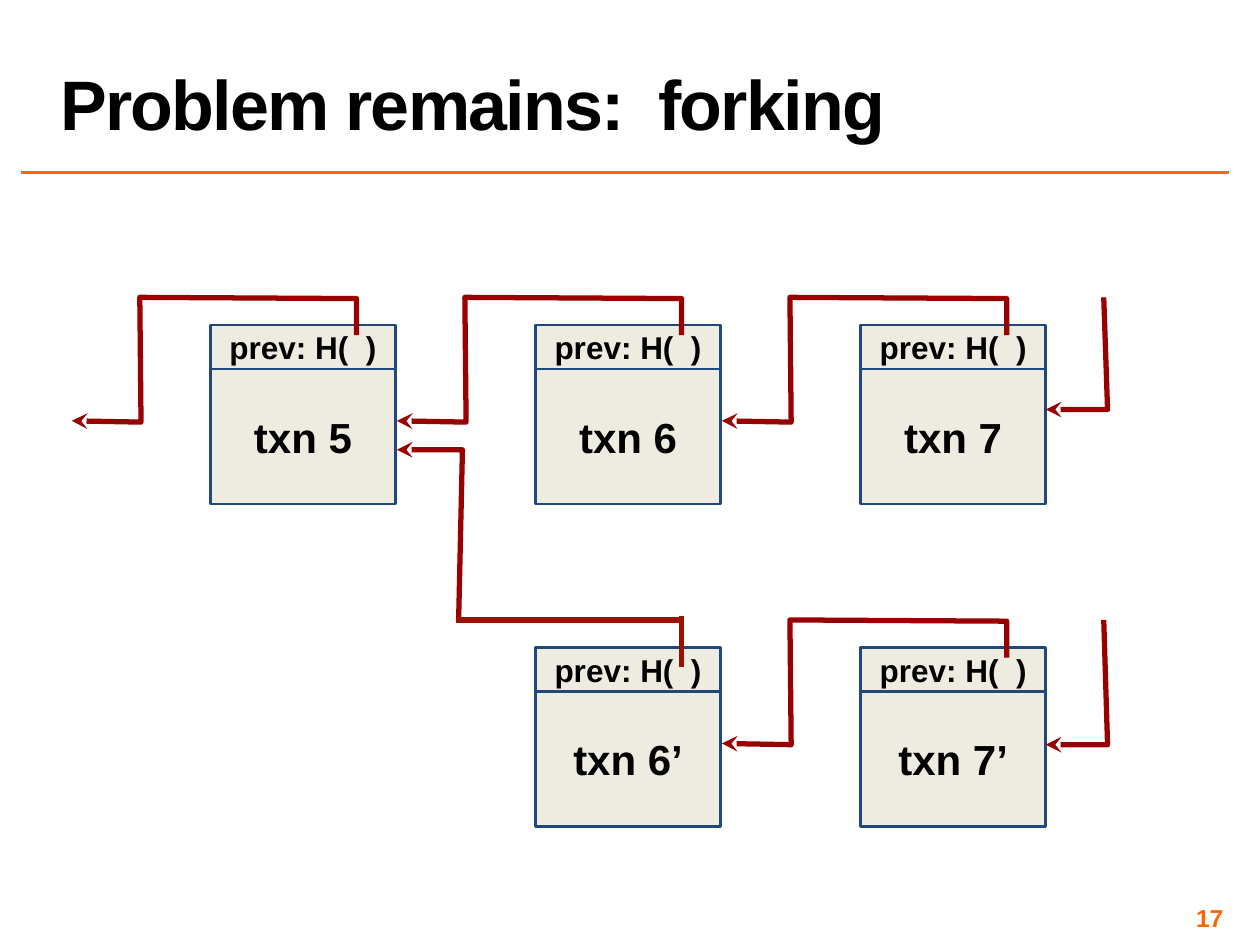
from pptx import Presentation
from pptx.dml.color import RGBColor
from pptx.enum.shapes import MSO_CONNECTOR as Conn, MSO_SHAPE as Kind
from pptx.enum.text import MSO_ANCHOR as Anchor, PP_ALIGN as Align
from pptx.oxml.xmlchemy import OxmlElement as Node
from pptx.util import Inches, Pt

BLACK = RGBColor(0x00, 0x00, 0x00)
ORANGE = RGBColor(0xFF, 0x66, 0x00)
CREAM = RGBColor(0xEE, 0xEC, 0xE1)
NAVY = RGBColor(0x1F, 0x49, 0x7D)
RED = RGBColor(0x99, 0x00, 0x00)
RUST = RGBColor(0x99, 0x12, 0x00)

LEFT, STEP = 1.67, 2.58
WIDE, HEAD, BODY = 1.47, 0.35, 1.07
TOP, FORK = 2.58, 5.14


def set_text(shape, text, size, color, align, anchor, inset):
    frame = shape.text_frame
    frame.text = text
    frame.word_wrap = True
    frame.vertical_anchor = anchor
    frame.margin_left = frame.margin_right = Inches(inset)
    frame.margin_top = frame.margin_bottom = Inches(min(inset, 0.05))
    par = frame.paragraphs[0]
    par.alignment = align
    font = par.runs[0].font
    font.name, font.size, font.bold = "Arial", Pt(size), True
    font.color.rgb = color
    return par


def add_label(slide, box, text, size, color, align, anchor, inset):
    shape = slide.shapes.add_textbox(*map(Inches, box))
    return set_text(shape, text, size, color, align, anchor, inset)


def add_rect(slide, x, y, high, text, size):
    box = map(Inches, (x, y, WIDE, high))
    rect = slide.shapes.add_shape(Kind.RECTANGLE, *box)
    rect.shadow.inherit = False
    rect.fill.solid()
    rect.fill.fore_color.rgb = CREAM
    rect.line.color.rgb = NAVY
    rect.line.width = Pt(1.5)
    set_text(rect, text, size, BLACK, Align.CENTER, Anchor.MIDDLE, 0.1)


def add_block(slide, col, y, name):
    x = LEFT + col * STEP
    add_rect(slide, x, y + HEAD, BODY, name, 24)
    add_rect(slide, x, y, HEAD, "prev: H(  )", 18)


def add_arrow(slide, points):
    start, *rest = [(Inches(x), Inches(y)) for x, y in points]
    form = slide.shapes.build_freeform(*start)
    form.add_line_segments(rest, close=False)
    arrow = form.convert_to_shape()
    arrow.shadow.inherit = False
    arrow.fill.background()
    arrow.line.color.rgb = RED
    arrow.line.width = Pt(3)
    tail = Node("a:tailEnd")
    tail.set("type", "stealth")
    arrow.line._get_or_add_ln().append(tail)


def add_link(slide, col, y):
    x = LEFT + col * STEP
    add_arrow(slide, [(x + 1.16, y + 0.08), (x + 1.16, y - 0.21),
                      (x - 0.56, y - 0.22), (x - 0.55, y + 0.77),
                      (x - 1.1, y + 0.76)])


def add_stub(slide, y, end):
    add_arrow(slide, [(8.76, y - 0.22), (8.79, end), (8.3, end)])


def add_line(slide, ends, color, width):
    line = slide.shapes.add_connector(Conn.STRAIGHT, *map(Inches, ends))
    line.line.color.rgb = color
    line.line.width = Pt(width)
    line._element.spPr.append(Node("a:effectLst"))


def main():
    deck = Presentation()
    deck.slide_width, deck.slide_height = Inches(10), Inches(7.5)
    slide = deck.slides.add_slide(deck.slide_layouts[6])

    add_line(slide, (0.17, 1.37, 9.75, 1.37), ORANGE, 2)
    add_label(slide, (7.42, 7.17, 2.33, 0.23), "17", 14, ORANGE,
              Align.RIGHT, Anchor.MIDDLE, 0.04)
    title = add_label(slide, (0.38, 0.02, 9.37, 1.17),
                      "Problem remains:  forking", 40, BLACK,
                      Align.LEFT, Anchor.BOTTOM, 0.1)
    title.line_spacing = 0.8
    title.runs[0].font._element.set("spc", "-100")

    rows = [(TOP, 0, ["txn 5", "txn 6", "txn 7"]),
            (FORK, 1, ["txn 6’", "txn 7’"])]
    for y, first, names in rows:
        for col, name in enumerate(names, first):
            add_block(slide, col, y, name)

    for col, y in [(0, TOP), (1, TOP), (2, TOP), (2, FORK)]:
        add_link(slide, col, y)
    add_stub(slide, TOP, 3.25)
    add_stub(slide, FORK, 5.91)

    add_arrow(slide, [(3.64, 4.93), (3.67, 3.57), (3.15, 3.57)])
    add_line(slide, (3.62, 4.92, 5.41, 4.92), RUST, 3)
    add_line(slide, (5.41, 5.29, 5.41, 4.89), RUST, 3)
    deck.save("out.pptx")


if __name__ == "__main__":
    main()
